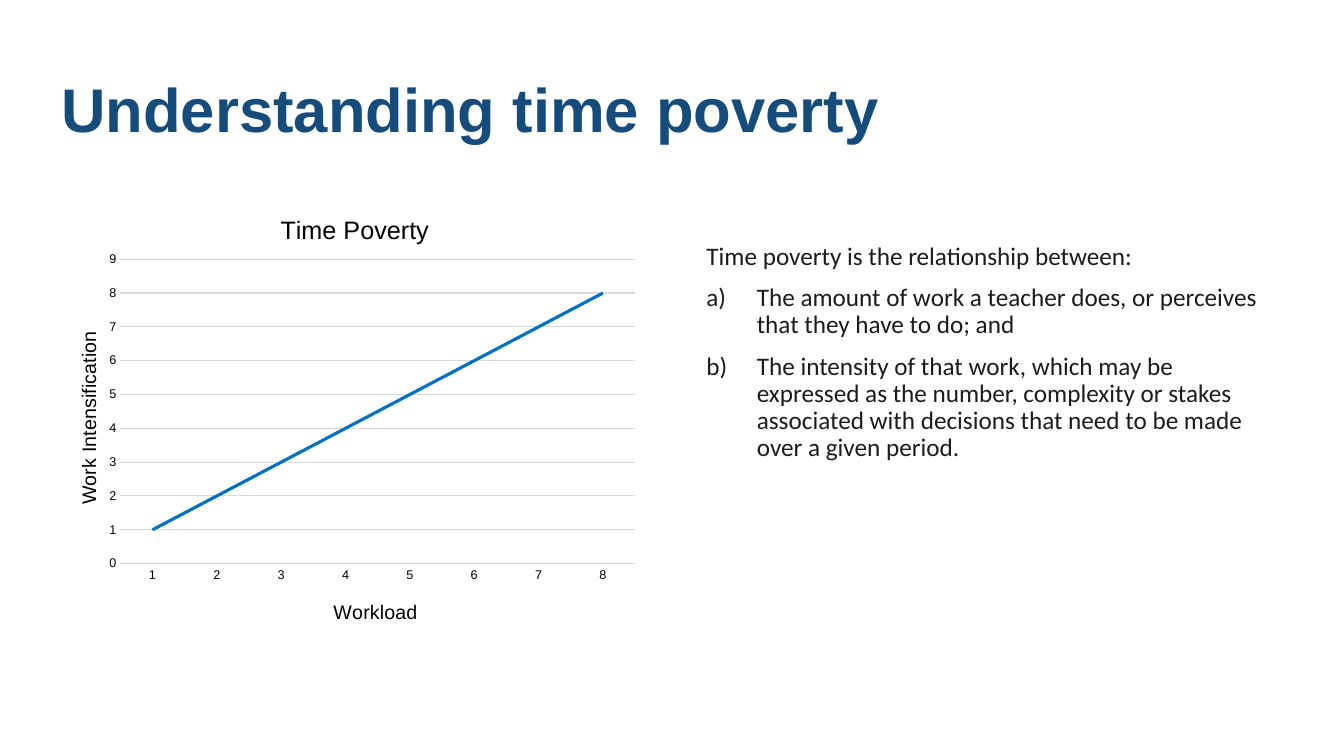
from dataclasses import dataclass

from lxml.etree import SubElement
from pptx import Presentation
from pptx.chart.data import CategoryChartData
from pptx.dml.color import RGBColor
from pptx.enum.chart import XL_CHART_TYPE, XL_TICK_MARK
from pptx.enum.text import MSO_ANCHOR
from pptx.oxml.ns import qn
from pptx.util import Pt

COLORS = {
    "title": "164C7B",
    "body": "1C1C1C",
    "chart": "000000",
    "grid": "D9D9D9",
    "series": "0070C0",
}


@dataclass
class Frame:
    left: float
    top: float
    width: float
    height: float

    def lengths(self) -> tuple:
        return Pt(self.left), Pt(self.top), Pt(self.width), Pt(self.height)


@dataclass
class Style:
    font: str
    size: float
    color: str
    bold: bool = False


@dataclass
class Item:
    text: str
    numbered: bool = False


TITLE_STYLE = Style("Arial", 44, "title", True)
BODY_STYLE = Style("Calibri", 18, "body")
HEADING_STYLE = Style("Arial", 18, "chart")
AXIS_TITLE_STYLE = Style("Arial", 14, "chart")
LABEL_STYLE = Style("Arial", 9, "chart")

TITLE = [Item("Understanding time poverty")]
DEFINITION = [
    Item("Time poverty is the relationship between:"),
    Item("The amount of work a teacher does, or perceives that they have to do; and", True),
    Item("The intensity of that work, which may be expressed as the number, complexity "
         "or stakes associated with decisions that need to be made over a given period.", True),
]


def rgb(name: str) -> RGBColor:
    return RGBColor.from_string(COLORS[name])


def apply_style(font, style: Style) -> None:
    font.name = style.font
    font.size = Pt(style.size)
    font.bold = style.bold
    font.color.rgb = rgb(style.color)


def add_text(page, frame: Frame, items: list, style: Style, anchor) -> None:
    box = page.shapes.add_textbox(*frame.lengths())
    text_frame = box.text_frame
    text_frame.word_wrap = True
    text_frame.vertical_anchor = anchor
    text_frame.text = "\n".join(item.text for item in items)
    for index, (para, item) in enumerate(zip(text_frame.paragraphs, items)):
        para.line_spacing = 0.9
        if index:
            para.space_before = Pt(10)
        if item.numbered:
            properties = para._p.get_or_add_pPr()
            properties.set("marL", str(Pt(36)))
            properties.set("indent", str(Pt(-36)))
            SubElement(properties, qn("a:buAutoNum"), type="alphaLcParenR")
        for span in para.runs:
            apply_style(span.font, style)


def set_title(owner, text: str, style: Style) -> None:
    """Title a chart or an axis."""
    title = owner.chart_title if hasattr(owner, "chart_title") else owner.axis_title
    title.text_frame.text = text
    for span in title.text_frame.paragraphs[0].runs:
        apply_style(span.font, style)


def place(element, position: int, **fractions: float) -> None:
    """Fix a chart element at fractions of the chart's size."""
    for old in element.findall(qn("c:layout")):
        element.remove(old)
    layout = SubElement(element, qn("c:layout"))
    element.insert(position, layout)
    manual = SubElement(layout, qn("c:manualLayout"))
    if "w" in fractions:
        SubElement(manual, qn("c:layoutTarget"), val="inner")
    for side in ("x", "y"):
        SubElement(manual, qn(f"c:{side}Mode"), val="edge")
    for side, value in fractions.items():
        SubElement(manual, qn(f"c:{side}"), val=str(value))


def add_line_chart(page, frame: Frame) -> None:
    data = CategoryChartData()
    data.categories = [str(step) for step in range(1, 9)]
    data.add_series("Series 1", range(1, 9))
    chart = page.shapes.add_chart(XL_CHART_TYPE.LINE, *frame.lengths(), data).chart
    chart.has_legend = False
    apply_style(chart.font, Style("Arial", 10, "chart"))

    workload, intensity = chart.category_axis, chart.value_axis
    set_title(chart, "Time Poverty", HEADING_STYLE)
    set_title(workload, "Workload", AXIS_TITLE_STYLE)
    set_title(intensity, "Work Intensification", AXIS_TITLE_STYLE)
    for axis in (workload, intensity):
        axis.major_tick_mark = axis.minor_tick_mark = XL_TICK_MARK.NONE
        apply_style(axis.tick_labels.font, LABEL_STYLE)
    intensity.minimum_scale, intensity.maximum_scale, intensity.major_unit = 0, 9, 1
    intensity.format.line.fill.background()
    for line in (workload.format.line, intensity.major_gridlines.format.line):
        line.color.rgb = rgb("grid")
        line.width = Pt(0.75)

    plot = chart.plots[0]
    plot.vary_by_categories = False
    series = plot.series[0]
    series.smooth = False
    series.format.line.color.rgb = rgb("series")
    series.format.line.width = Pt(2.25)

    turned = intensity.axis_title.text_frame._txBody.bodyPr
    turned.set("rot", "-5400000")
    turned.set("vert", "horz")
    root = chart._chartSpace
    corners = [(0.38, 0.05), (0.47, 0.9), (0.04, 0.31)]
    for title, (x, y) in zip(root.xpath("//c:title"), corners):
        place(title, 1, x=x, y=y)
    place(root.xpath("//c:plotArea")[0], 0, x=0.12, y=0.16, w=0.86, h=0.67)


def main() -> None:
    deck = Presentation()
    deck.slide_width, deck.slide_height = Pt(960), Pt(540)
    page = deck.slides.add_slide(deck.slide_layouts[6])
    add_text(page, Frame(36.7, 28, 884, 105), TITLE, TITLE_STYLE, MSO_ANCHOR.MIDDLE)
    add_text(page, Frame(497.5, 170.6, 423.4, 283), DEFINITION, BODY_STYLE, MSO_ANCHOR.TOP)
    add_line_chart(page, Frame(34.6, 133.2, 427.7, 324.7))
    deck.save("out.pptx")


if __name__ == "__main__":
    main()
